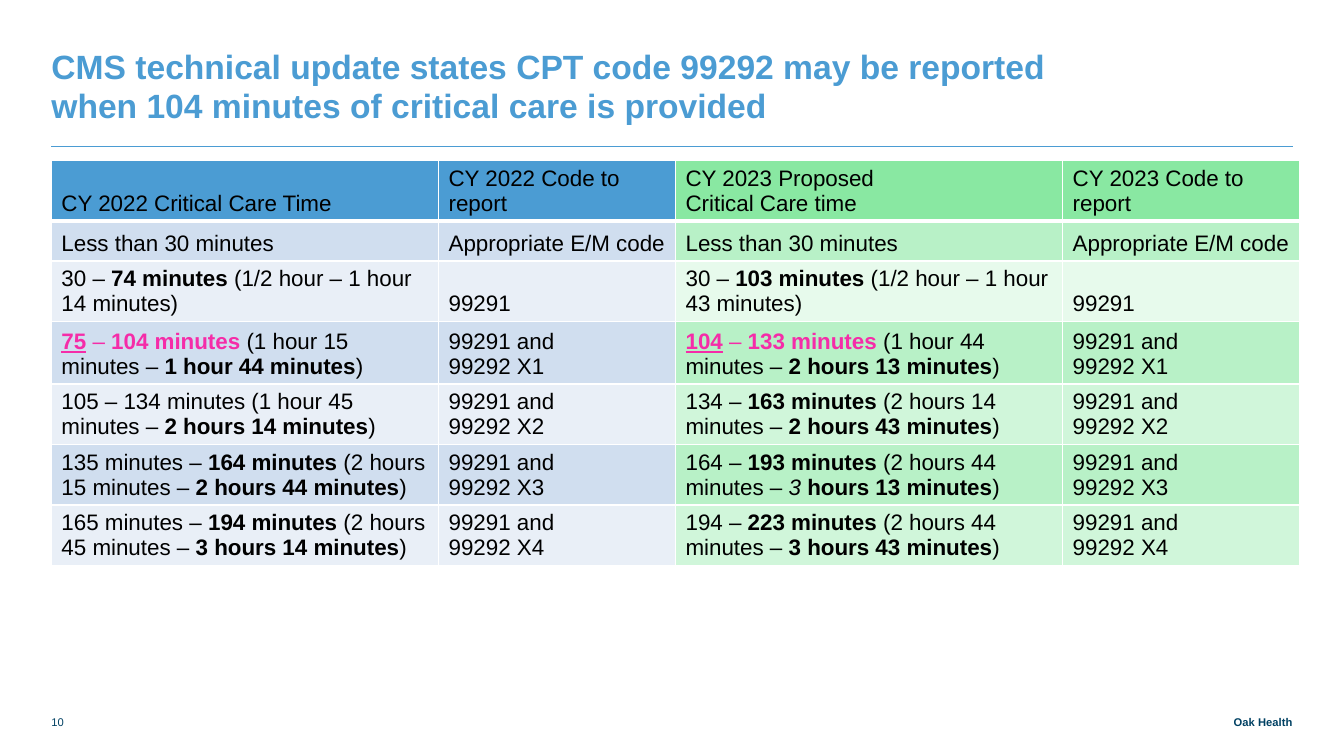
import pptx
import pptx.util
import pptx.dml.color
import pptx.enum.shapes
import pptx.enum.text
import pptx.oxml
import pptx.oxml.ns

# Content: a cell is a list of paragraphs, a paragraph a list of (text, style keys)
TITLE = ("CMS technical update states CPT code 99292 may be reported "
         "when 104 minutes of critical care is provided")
PAGE, OWNER = "10", "Oak Health"


def plain(*lines):
    return [[(line, "")] for line in lines]


def codes(units):
    return plain("99291 and", f"99292 X{units}")


def span(start, end, detail, limit):
    return [[(start, ""), (end, "b"), (detail, ""), (limit, "b"), (")", "")]]


ROWS = [
    [plain("CY 2022 Critical Care Time"), plain("CY 2022 Code to report"),
     plain("CY 2023 Proposed", "Critical Care time"), plain("CY 2023 Code to report")],
    [plain("Less than 30 minutes"), plain("Appropriate E/M code")] * 2,
    [[[("30 – ", ""), ("74 minutes ", "b"), ("(1/2 hour – 1 hour 14 minutes)", "")]],
     plain("99291"),
     [[("30 – ", ""), ("103 minutes ", "b"), ("(1/2 hour – 1 hour 43 minutes)", "")]],
     plain("99291")],
    [[[("75", "pbu"), (" ", "pb"), ("– ", "p"), ("104 minutes ", "pb"),
       ("(1 hour 15 minutes – ", ""), ("1 hour 44 minutes", "b"), (")", "")]],
     codes(1),
     [[("104", "pbu"), (" – ", "p"), ("133 minutes ", "pb"),
       ("(1 hour 44 minutes – ", ""), ("2 hours 13 minutes", "b"), (")", "")]],
     codes(1)],
    [[[("105 – 134 minutes (1 hour 45 minutes – ", ""),
       ("2 hours 14 minutes", "b"), (")", "")]],
     codes(2),
     span("134 – ", "163 minutes ", "(2 hours 14 minutes – ", "2 hours 43 minutes"),
     codes(2)],
    [span("135 minutes – ", "164 minutes ", "(2 hours 15 minutes – ", "2 hours 44 minutes"),
     codes(3),
     [[("164 – ", ""), ("193 minutes ", "b"), ("(2 hours 44 minutes – ", ""),
       ("3", "i"), (" hours 13 minutes", "b"), (")", "")]],
     codes(3)],
    [span("165 minutes – ", "194 minutes ", "(2 hours 45 minutes – ", "3 hours 14 minutes"),
     codes(4),
     span("194 – ", "223 minutes ", "(2 hours 44 minutes – ", "3 hours 43 minutes"),
     codes(4)],
]

# Look
COLORS = {"blue": "4B9CD3", "navy": "004163", "black": "000000", "pink": "F52CA8",
          "white": "FFFFFF", "green": "89E8A2", "blue_mid": "D0DEEF",
          "blue_pale": "E9EFF7", "green_mid": "B8F1C7", "green_pale": "D0F6DA",
          "green_faint": "E7FAEC"}
MID = ("blue_mid", "green_mid")
PALE = ("blue_pale", "green_pale")
ROW_FILLS = [("blue", "green"), MID, ("blue_pale", "green_faint"), MID, PALE, MID, PALE]

# Grid in inches
LEFT, RIGHT = 0.51, 12.82
COLS = [3.84, 2.35] * 2
HEIGHTS = [0.6, 0.4, 0.6, 0.62, 0.6, 0.6, 0.6]
TABLE_TOP, RULE_Y = 1.59, 1.45
FOOT_TOP, FOOT_H = 7, 0.23

Inches, Pt = pptx.util.Inches, pptx.util.Pt
ALIGN = pptx.enum.text.PP_ALIGN
BOTTOM = pptx.enum.text.MSO_ANCHOR.BOTTOM


def rgb(name):
    return pptx.dml.color.RGBColor.from_string(COLORS[name])


def add_run(p, text, size, color, **extra):
    r = p.add_run()
    r.text = text
    for key, value in {"name": "Arial", "size": Pt(size), "bold": False, **extra}.items():
        setattr(r.font, key, value)
    r.font.color.rgb = rgb(color)


def set_frame(tf, right=0):
    values = {"margin_left": 0, "margin_top": 0, "margin_right": Inches(right),
              "margin_bottom": 0, "word_wrap": True, "vertical_anchor": BOTTOM,
              "auto_size": pptx.enum.text.MSO_AUTO_SIZE.NONE}
    for key, value in values.items():
        setattr(tf, key, value)


def add_footer(s, left, width, text, align, bold):
    sp = s.shapes.add_textbox(*map(Inches, (left, FOOT_TOP, width, FOOT_H)))
    set_frame(sp.text_frame)
    p = sp.text_frame.paragraphs[0]
    p.alignment = align
    add_run(p, text, 8, "navy", bold=bold)


def set_borders(cell, bottom):
    tc_pr = cell._tc.get_or_add_tcPr()
    for i, side in enumerate("LRTB"):
        width = Pt(bottom if side == "B" else 1)
        tc_pr.insert(i, pptx.oxml.parse_xml(
            f'<a:ln{side} {pptx.oxml.ns.nsdecls("a")} w="{width}"><a:solidFill>'
            f'<a:srgbClr val="{COLORS["white"]}"/></a:solidFill></a:ln{side}>'))


def fill_cell(cell, paragraphs, fill, bottom):
    cell.fill.solid()
    cell.fill.fore_color.rgb = rgb(fill)
    cell.vertical_anchor = BOTTOM
    set_borders(cell, bottom)
    tf = cell.text_frame
    for i, runs in enumerate(paragraphs):
        p = tf.add_paragraph() if i else tf.paragraphs[0]
        for text, keys in runs:
            add_run(p, text, 16, "pink" if "p" in keys else "black",
                    bold="b" in keys, italic="i" in keys, underline="u" in keys)


def main():
    prs = pptx.Presentation()
    prs.slide_width, prs.slide_height = Inches(13.33), Inches(7.5)
    s = prs.slides.add_slide(prs.slide_layouts[5])

    # Title and rule
    title = s.shapes.title
    title.left, title.top, title.width, title.height = map(
        Inches, (LEFT, 0.45, RIGHT - LEFT, 0.79))
    set_frame(title.text_frame, right=2.12)
    p = title.text_frame.paragraphs[0]
    p.alignment, p.line_spacing = ALIGN.LEFT, Pt(28)
    add_run(p, TITLE, 24, "blue", bold=True)

    rule = s.shapes.add_connector(pptx.enum.shapes.MSO_CONNECTOR.STRAIGHT,
                                  *map(Inches, (LEFT, RULE_Y, RIGHT, RULE_Y)))
    rule.line.color.rgb, rule.line.width = rgb("blue"), Pt(0.5)
    rule._element.spPr.append(pptx.oxml.parse_xml(
        f'<a:effectLst {pptx.oxml.ns.nsdecls("a")}/>'))

    # Table: blue half for 2022, green half for 2023
    frame = s.shapes.add_table(len(ROWS), len(COLS), *map(
        Inches, (LEFT, TABLE_TOP, sum(COLS), sum(HEIGHTS))))
    table = frame.table
    table.first_row = table.horz_banding = False
    for column, width in zip(table.columns, COLS):
        column.width = Inches(width)
    for i, (row, height) in enumerate(zip(table.rows, HEIGHTS)):
        row.height = Inches(height)
        for j, cell in enumerate(row.cells):
            fill_cell(cell, ROWS[i][j], ROW_FILLS[i][j // 2], 1 if i else 3)

    # Footer
    add_footer(s, LEFT, 0.46, PAGE, ALIGN.LEFT, False)
    add_footer(s, RIGHT - 1.64, 1.64, OWNER, ALIGN.RIGHT, True)
    prs.save("out.pptx")


if __name__ == "__main__":
    main()
